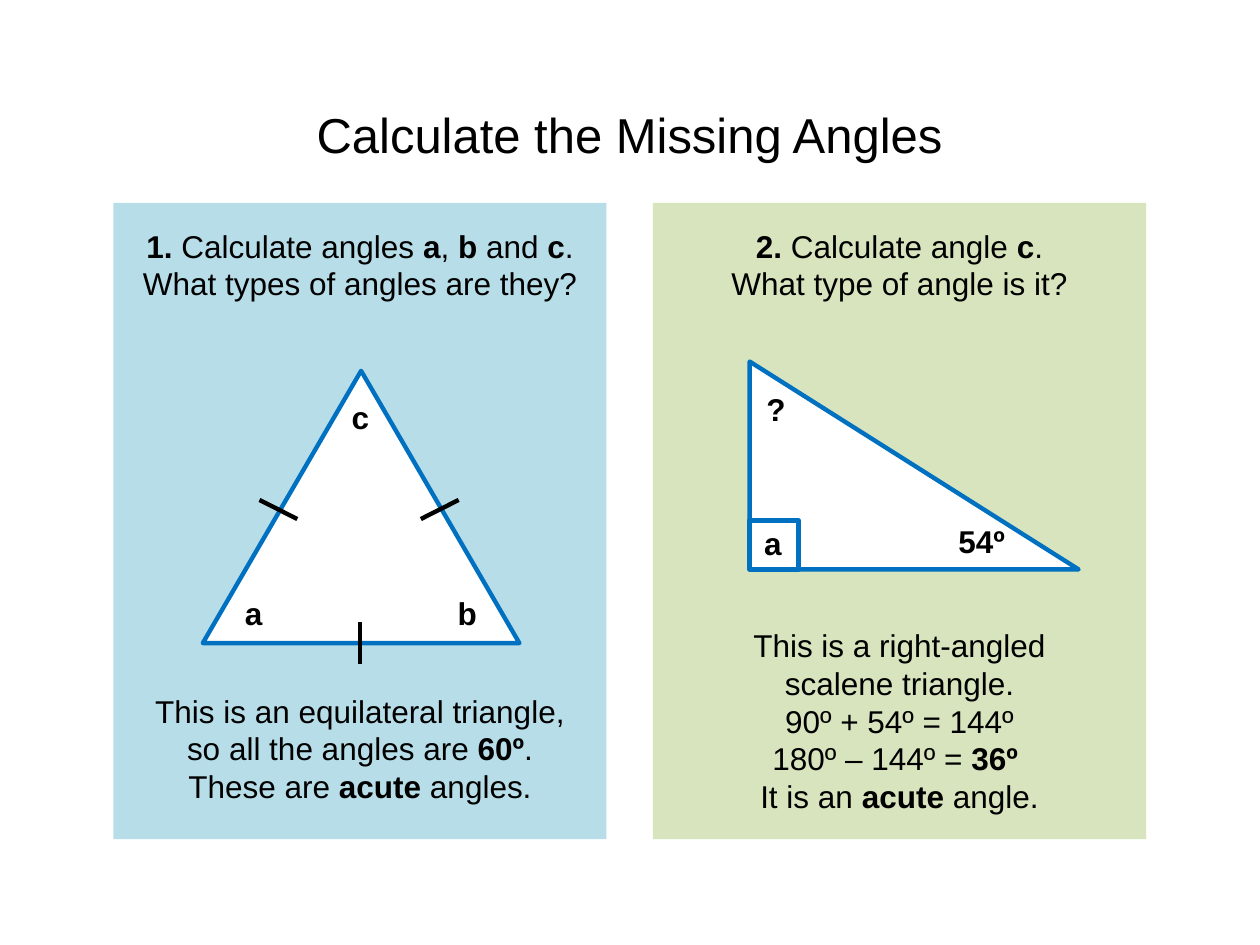
from lxml import etree
from pptx import Presentation
from pptx.dml.color import RGBColor
from pptx.enum import shapes, text
from pptx.oxml import ns
from pptx.util import Pt

BLACK = RGBColor(0x00, 0x00, 0x00)
WHITE = RGBColor(0xFF, 0xFF, 0xFF)
BLUE = RGBColor(0x00, 0x70, 0xC0)
AQUA = RGBColor(0xB7, 0xDE, 0xE8)
GREEN = RGBColor(0xD7, 0xE4, 0xBD)

TITLE = "Calculate the Missing Angles"
PANELS = [
    {
        "fill": AQUA,
        "question": ["**1. **Calculate angles **a**, **b** and **c**. What types of angles are they?"],
        "answer": [
            "This is an equilateral triangle,",
            "so all the angles are **60º**.\nThese are **acute** angles.",
        ],
        "answer_box": (391.7, 72.7),
    },
    {
        "fill": GREEN,
        "question": ["**2. **Calculate angle **c**.\nWhat type of angle is it?"],
        "answer": [
            "This is a right-angled\nscalene triangle.",
            "90º + 54º = 144º",
            "180º – 144º =** 36º **\nIt is an **acute** angle.",
        ],
        "answer_box": (354.2, 115.9),
    },
]
TRIANGLES = [(115.9, 211.9, 180.9, 155.6, 0.5), (428.4, 206.6, 188, 118.8, 0)]
RIGHT_ANGLE = (428.4, 297.4, 28, 28)
TICKS = [
    (148.3, 285.7, 169.9, 296.6),
    (262.1, 285.7, 240.5, 296.6),
    (205.9, 355.7, 205.9, 379.4),
]
LABELS = [
    ("c", 205.9, 224.2),
    ("a", 145, 336.2),
    ("b", 267, 336.2),
    ("a", 441.7, 296.1),
    ("54º", 561, 294.5),
    ("?", 443.4, 219.6),
]

PANEL_LEFT, PANEL_TOP, PANEL_W, PANEL_H = 64.8, 116, 281.8, 363.6
PANEL_STEP = 308.3
TEXT_W = 267.8
LABEL_W, LABEL_H = 47.5, 28.8
LINE_W = 2.5


def add_text(s, paragraphs, x, y, w, h, size=18, anchor=text.MSO_ANCHOR.TOP):
    tf = s.shapes.add_textbox(Pt(x), Pt(y), Pt(w), Pt(h)).text_frame
    tf.word_wrap = True
    tf.vertical_anchor = anchor
    for i, content in enumerate(paragraphs):
        p = tf.add_paragraph() if i else tf.paragraphs[0]
        p.alignment = text.PP_ALIGN.CENTER
        for j, part in enumerate(content.split("**")):
            for k, line in enumerate(part.split("\n")):
                if k:
                    p.add_line_break()
                if line:
                    r = p.add_run()
                    r.text = line
                    r.font.name = "Arial"
                    r.font.size = Pt(size)
                    r.font.bold = j % 2 == 1
                    r.font.color.rgb = BLACK


def add_figure(s, kind, x, y, w, h, fill=None, line=None):
    sp = s.shapes.add_shape(kind, Pt(x), Pt(y), Pt(w), Pt(h))
    sp.shadow.inherit = False
    if fill is None:
        sp.fill.background()
    else:
        sp.fill.solid()
        sp.fill.fore_color.rgb = fill
    if line is None:
        sp.line.fill.background()
    else:
        sp.line.color.rgb = line
        sp.line.width = Pt(LINE_W)
    return sp


def add_tick(s, *ends):
    tick = s.shapes.add_connector(shapes.MSO_CONNECTOR.STRAIGHT, *map(Pt, ends))
    tick.line.color.rgb = BLACK
    tick.line.width = Pt(LINE_W)
    etree.SubElement(tick._element.spPr, ns.qn("a:effectLst"))


def main():
    prs = Presentation()
    prs.slide_width, prs.slide_height = Pt(720), Pt(540)
    s = prs.slides.add_slide(prs.slide_layouts[6])

    add_text(s, [TITLE], 36, 37.4, 647.3, 78.5, 28, text.MSO_ANCHOR.MIDDLE)
    for i, panel in enumerate(PANELS):
        x = PANEL_LEFT + i * PANEL_STEP
        text_x = x + (PANEL_W - TEXT_W) / 2
        add_figure(s, shapes.MSO_SHAPE.RECTANGLE, x, PANEL_TOP, PANEL_W, PANEL_H, panel["fill"])
        add_text(s, panel["question"], text_x, 126, TEXT_W, 50.9)
        top, height = panel["answer_box"]
        add_text(s, panel["answer"], text_x, top, TEXT_W, height)

    for *box, apex in TRIANGLES:
        triangle = add_figure(s, shapes.MSO_SHAPE.ISOSCELES_TRIANGLE, *box, WHITE, BLUE)
        triangle.adjustments[0] = apex
    add_figure(s, shapes.MSO_SHAPE.RECTANGLE, *RIGHT_ANGLE, line=BLUE)
    for ends in TICKS:
        add_tick(s, *ends)
    for label, center, top in LABELS:
        add_text(s, [f"**{label}**"], center - LABEL_W / 2, top, LABEL_W, LABEL_H)

    prs.save("out.pptx")


if __name__ == "__main__":
    main()
